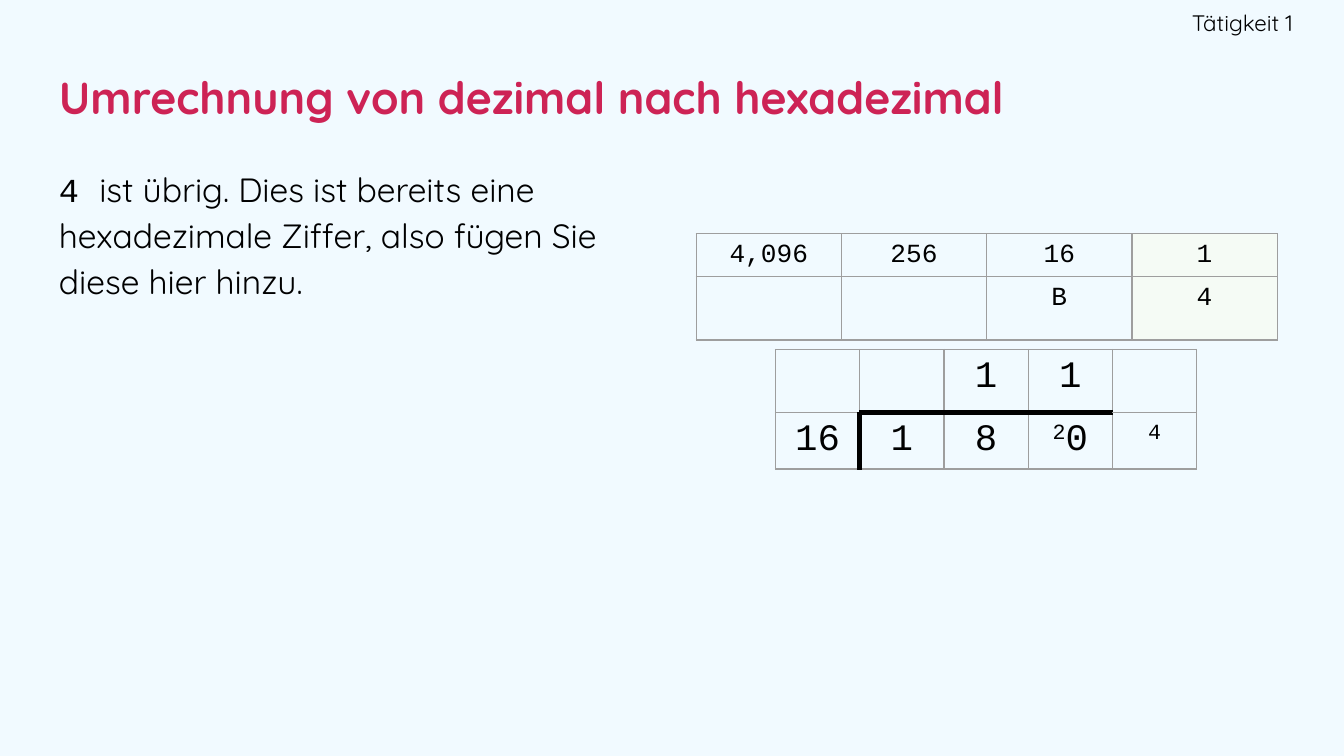
from lxml.etree import SubElement
from pptx import Presentation
from pptx.dml.color import RGBColor
from pptx.enum.text import MSO_ANCHOR as Anchor, PP_ALIGN as Align
from pptx.oxml.ns import qn
from pptx.util import Inches, Pt

WIDTH = Inches(10)
HEIGHT = WIDTH * 9 // 16
SANS, MONO = "Quicksand", "Courier New"
BLACK, GREY, RED = "000000", "9E9E9E", "CD2355"
BACKGROUND, HIGHLIGHT = "F1FAFF", "F5FBF5"
THIN, THICK = 0.75, 3
CELL_INSET = Inches(0.05)


def color(code):
    return RGBColor.from_string(code)


def across(percent):
    """Length as a percentage of the slide's width."""
    return round(WIDTH * percent / 100)


def down(percent):
    """Length as a percentage of the slide's height."""
    return round(HEIGHT * percent / 100)


def add_span(para, text, font=SANS, size=18, ink=BLACK, bold=False, raised=False):
    span = para.add_run()
    span.text = text
    span.font.name = font
    span.font.size = Pt(size)
    span.font.bold = bold
    span.font.color.rgb = color(ink)
    if raised:
        span.font._element.set("baseline", "30000")


def add_box(page, left, top, width, height, anchor=Anchor.MIDDLE,
            align=Align.LEFT, right_inset=0.1):
    """Add an empty text box and return its paragraph."""
    box = page.shapes.add_textbox(across(left), down(top), across(width), down(height))
    frame = box.text_frame
    frame.word_wrap = True
    frame.vertical_anchor = anchor
    frame.margin_left = frame.margin_top = frame.margin_bottom = Inches(0.1)
    frame.margin_right = Inches(right_inset)
    para = frame.paragraphs[0]
    para.alignment = align
    return para


def draw_borders(cell, thick_sides):
    properties = cell._tc.get_or_add_tcPr()
    for side in "LRTB":
        thick = side in thick_sides
        line = SubElement(properties, qn(f"a:ln{side}"),
                          w=str(Pt(THICK if thick else THIN)))
        fill = SubElement(line, qn("a:solidFill"))
        SubElement(fill, qn("a:srgbClr"), val=BLACK if thick else GREY)


def add_grid(page, left, top, column, row_heights, rows, size,
             thick=None, highlight_column=None):
    """Add a table; a caret in a cell raises the digit that follows it."""
    count = len(rows[0])
    table = page.shapes.add_table(
        len(rows), count, across(left), down(top),
        across(column * count), down(sum(row_heights))).table
    table.first_row = table.horz_banding = False
    for table_column in table.columns:
        table_column.width = across(column)
    for r, (height, texts) in enumerate(zip(row_heights, rows)):
        table.rows[r].height = down(height)
        for c, text in enumerate(texts):
            cell = table.cell(r, c)
            cell.margin_left = cell.margin_right = CELL_INSET
            cell.margin_top = cell.margin_bottom = CELL_INSET
            draw_borders(cell, (thick or {}).get((r, c), ""))
            if c == highlight_column:
                cell.fill.solid()
                cell.fill.fore_color.rgb = color(HIGHLIGHT)
            else:
                cell.fill.background()
            para = cell.text_frame.paragraphs[0]
            para.alignment = Align.CENTER
            plain, _, raised = text.partition("^")
            for part, is_raised in ((plain, False), (raised[:1], True), (raised[1:], False)):
                if part:
                    add_span(para, part, font=MONO, size=size, raised=is_raised)


def add_place_values(page):
    add_grid(page, 51.8, 30.93, 10.81, (5.69, 8.36),
             (("4,096", "256", "16", "1"), ("", "", "B", "4")),
             size=14, highlight_column=3)


def add_division(page):
    bracket = {(0, c): "B" for c in (1, 2, 3)} | {(1, c): "T" for c in (2, 3)}
    bracket |= {(1, 0): "R", (1, 1): "LT"}
    add_grid(page, 57.7, 46.22, 6.27, (8.36, 7.47),
             (("", "", "1", "1", ""), ("16", "1", "8", "^20", "^4")),
             size=20, thick=bracket)


def add_texts(page):
    title = add_box(page, 3.4, 6.04, 93.2, 13.51)
    add_span(title, "Umrechnung von dezimal nach hexadezimal", size=24, ink=RED, bold=True)

    body = add_box(page, 3.4, 19.73, 44.8, 71.11, anchor=Anchor.TOP)
    body.line_spacing = 1.15
    body.space_after = Pt(16)
    add_span(body, "4 ", font=MONO)
    add_span(body, "ist übrig. Dies ist bereits eine hexadezimale Ziffer, "
                   "also fügen Sie diese hier hinzu.")

    label = add_box(page, 74.8, 0, 21.4, 6.04, align=Align.RIGHT, right_inset=0)
    add_span(label, "Tätigkeit 1", size=12)


def main():
    deck = Presentation()
    deck.slide_width, deck.slide_height = WIDTH, HEIGHT
    page = deck.slides.add_slide(deck.slide_layouts[6])
    page.background.fill.solid()
    page.background.fill.fore_color.rgb = color(BACKGROUND)
    add_place_values(page)
    add_division(page)
    add_texts(page)
    deck.save("out.pptx")


if __name__ == "__main__":
    main()
